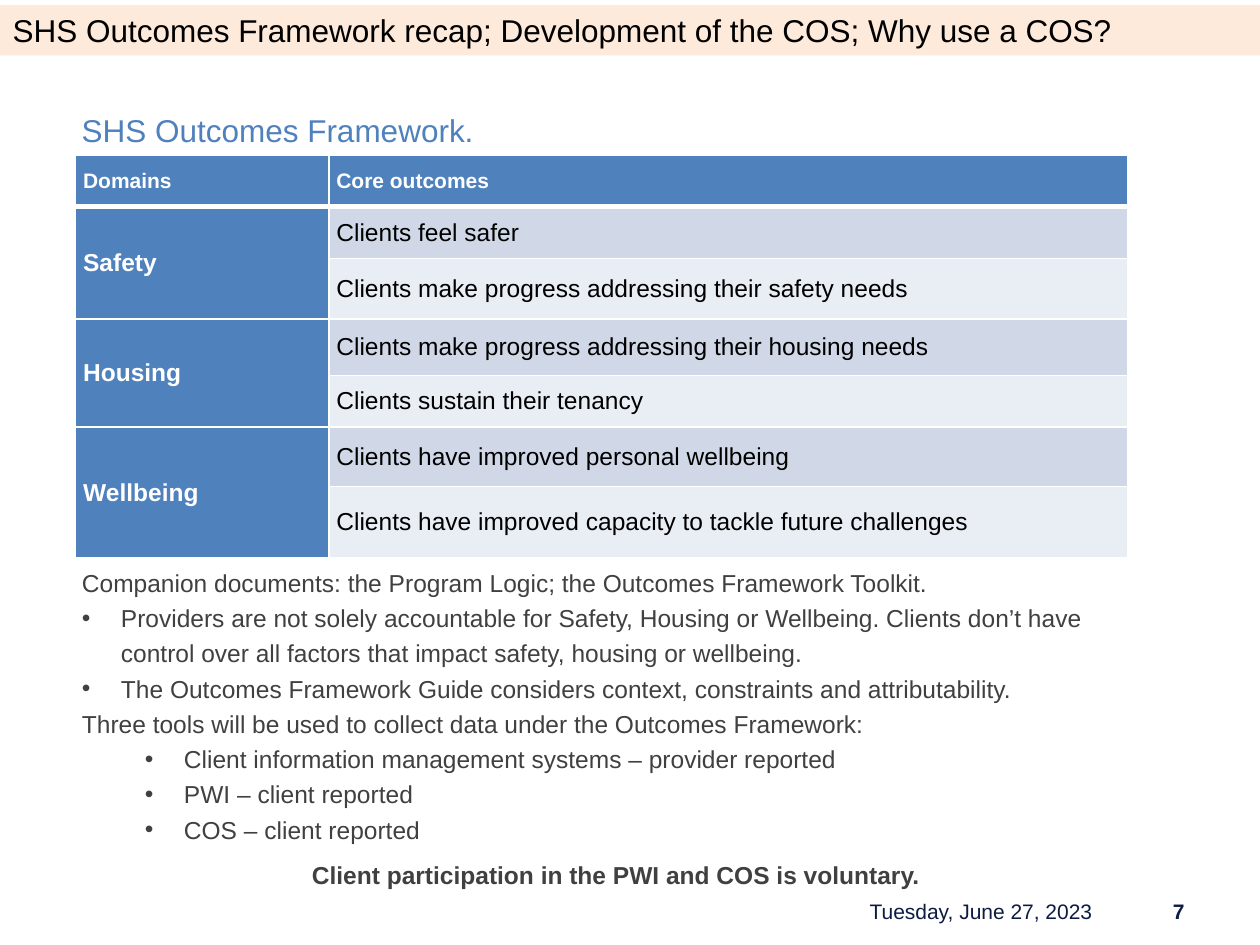
from typing import NamedTuple

from pptx import Presentation, util as u
from pptx.dml.color import RGBColor
from pptx.enum import text as t
from pptx.oxml import parse_xml
from pptx.oxml.ns import nsdecls

WIDE, HIGH = 10, 7.5
BLUE, WHITE, BLACK, GREY, NAVY = "4F81BD", "FFFFFF", "000000", "404040", "0D1B43"
BANDS = "D0D8E8", "E9EDF4"
LEFT, MID, RIGHT, FULL = (t.PP_ALIGN.LEFT, t.PP_ALIGN.CENTER,
                          t.PP_ALIGN.RIGHT, t.PP_ALIGN.JUSTIFY)
TOP, CORE = t.MSO_ANCHOR.TOP, t.MSO_ANCHOR.MIDDLE


class Box(NamedTuple):
    x: float
    y: float
    w: float
    h: float


class Line(NamedTuple):
    text: str
    dent: float = 0
    align: t.PP_ALIGN = LEFT
    bold: bool = False
    after: float = 0


class Group(NamedTuple):
    name: str
    goals: tuple


LINES = [
    Line("Companion documents: the Program Logic; the Outcomes Framework Toolkit."),
    Line("Providers are not solely accountable for Safety, Housing or Wellbeing. "
         "Clients don’t have control over all factors that impact safety, "
         "housing or wellbeing.", 0.31),
    Line("The Outcomes Framework Guide considers context, constraints and "
         "attributability.", 0.31),
    Line("Three tools will be used to collect data under the Outcomes Framework:"),
    Line("Client information management systems – provider reported", 0.81),
    Line("PWI – client reported", 0.81),
    Line("COS – client reported", 0.81, after=6),
    Line("Client participation in the PWI and COS is voluntary.", align=MID, bold=True),
]
GROUPS = [
    Group("Safety", ("Clients feel safer",
                     "Clients make progress addressing their safety needs")),
    Group("Housing", ("Clients make progress addressing their housing needs",
                      "Clients sustain their tenancy")),
    Group("Wellbeing", ("Clients have improved personal wellbeing",
                        "Clients have improved capacity to tackle future challenges")),
]
COLS = 20.1, 63.4
ROWS = 5.47, 5.47, 6.4, 6, 5.47, 6.27, 7.6


def across(part: float) -> int:
    return u.Inches(WIDE * part / 100)


def down(part: float) -> int:
    return u.Inches(HIGH * part / 100)


def spot(box: Box) -> tuple:
    return across(box.x), down(box.y), across(box.w), down(box.h)


def hue(code: str) -> RGBColor:
    return RGBColor.from_string(code)


def paint(thing, code: str) -> None:
    thing.fill.solid()
    thing.fill.fore_color.rgb = hue(code)


def write(para, words: str, size: float = 14, color: str = BLACK,
          bold: bool = False, align: t.PP_ALIGN = LEFT) -> None:
    para.alignment = align
    run = para.add_run()
    run.text = words
    font = run.font
    font.name, font.size, font.bold = "Arial", u.Pt(size), bold
    font.color.rgb = hue(color)


def frame(shape, anchor: t.MSO_ANCHOR = TOP):
    body = shape.text_frame
    body.word_wrap = True
    body.auto_size = t.MSO_AUTO_SIZE.NONE
    body.vertical_anchor = anchor
    return body


def label(slide, box: Box, words: str, anchor: t.MSO_ANCHOR = TOP, **form) -> None:
    shape = slide.shapes.add_textbox(*spot(box))
    write(frame(shape, anchor).paragraphs[0], words, **form)


def place(shape, box: Box) -> None:
    shape.left, shape.top, shape.width, shape.height = spot(box)


def bullet(para, dent: float) -> None:
    props = para._p.get_or_add_pPr()
    props.set("marL", str(u.Inches(dent)))
    props.set("indent", str(u.Inches(-0.31 if dent else 0)))
    mark = 'buChar {} char="•"' if dent else "buNone {}"
    props.append(parse_xml(f"<a:{mark.format(nsdecls('a'))}/>"))


def edge(cell, head: bool, under: bool) -> None:
    props = cell._tc.get_or_add_tcPr()
    thick = {"T": 3 if under else 1, "B": 3 if head else 1}
    for side in "LRTB":
        width = u.Pt(thick.get(side, 1))
        props.append(parse_xml(
            f'<a:ln{side} {nsdecls("a")} w="{width}"><a:solidFill>'
            f'<a:srgbClr val="{WHITE}"/></a:solidFill></a:ln{side}>'))


def fill_cell(cell, words: str, back: str, **form) -> None:
    paint(cell, back)
    cell.vertical_anchor = CORE
    cell.margin_left = cell.margin_right = u.Inches(0.06)
    cell.margin_top = cell.margin_bottom = 0
    if words:
        write(cell.text_frame.paragraphs[0], words, align=FULL, **form)


def draw_table(slide, x: float, y: float) -> None:
    box = Box(x, y, sum(COLS), sum(ROWS))
    grid = slide.shapes.add_table(len(ROWS), len(COLS), *spot(box)).table
    for col, part in zip(grid.columns, COLS):
        col.width = across(part)
    for row, part in zip(grid.rows, ROWS):
        row.height = down(part)
    for r in range(len(ROWS)):
        for c in range(len(COLS)):
            edge(grid.cell(r, c), r == 0, r == 1)
    for c, words in enumerate(("Domains", "Core outcomes")):
        fill_cell(grid.cell(0, c), words, BLUE, size=12, color=WHITE, bold=True)
    row = 1
    for group in GROUPS:
        first = row
        for goal, band in zip(group.goals, BANDS):
            name = group.name if row == first else ""
            fill_cell(grid.cell(row, 0), name, BLUE, color=WHITE, bold=True)
            fill_cell(grid.cell(row, 1), goal, band)
            row += 1
        grid.cell(first, 0).merge(grid.cell(row - 1, 0))


def draw_list(shape, box: Box) -> None:
    place(shape, box)
    body = frame(shape)
    for i, line in enumerate(LINES):
        para = body.add_paragraph() if i else body.paragraphs[0]
        para.level = int(line.dent > 0.5)
        bullet(para, line.dent)
        para.line_spacing = 1.2
        para.space_before, para.space_after = u.Pt(0), u.Pt(line.after)
        write(para, line.text, color=GREY, bold=line.bold, align=line.align)


def main() -> None:
    deck = Presentation()
    deck.slide_width, deck.slide_height = u.Inches(WIDE), u.Inches(HIGH)
    slide = deck.slides.add_slide(deck.slide_layouts[1])
    title, body = slide.placeholders
    place(title, Box(0, 0.53, 100, 5.33))
    paint(title, "FDEADA")
    write(frame(title).paragraphs[0],
          "SHS Outcomes Framework recap; Development of the COS; Why use a COS?",
          size=18)
    label(slide, Box(5.5, 11.07, 82.7, 5.33), "SHS Outcomes Framework.",
          size=18, color=BLUE)
    draw_table(slide, 6, 16.4)
    draw_list(body, Box(5.5, 58.8, 86.8, 40.13))
    foot = dict(anchor=CORE, size=12, color=NAVY, align=RIGHT)
    label(slide, Box(64.4, 94.93, 23.3, 3.07), "Tuesday, June 27, 2023", **foot)
    label(slide, Box(86.8, 94.93, 8.2, 3.07), "7", bold=True, **foot)
    deck.save("out.pptx")


if __name__ == "__main__":
    main()
